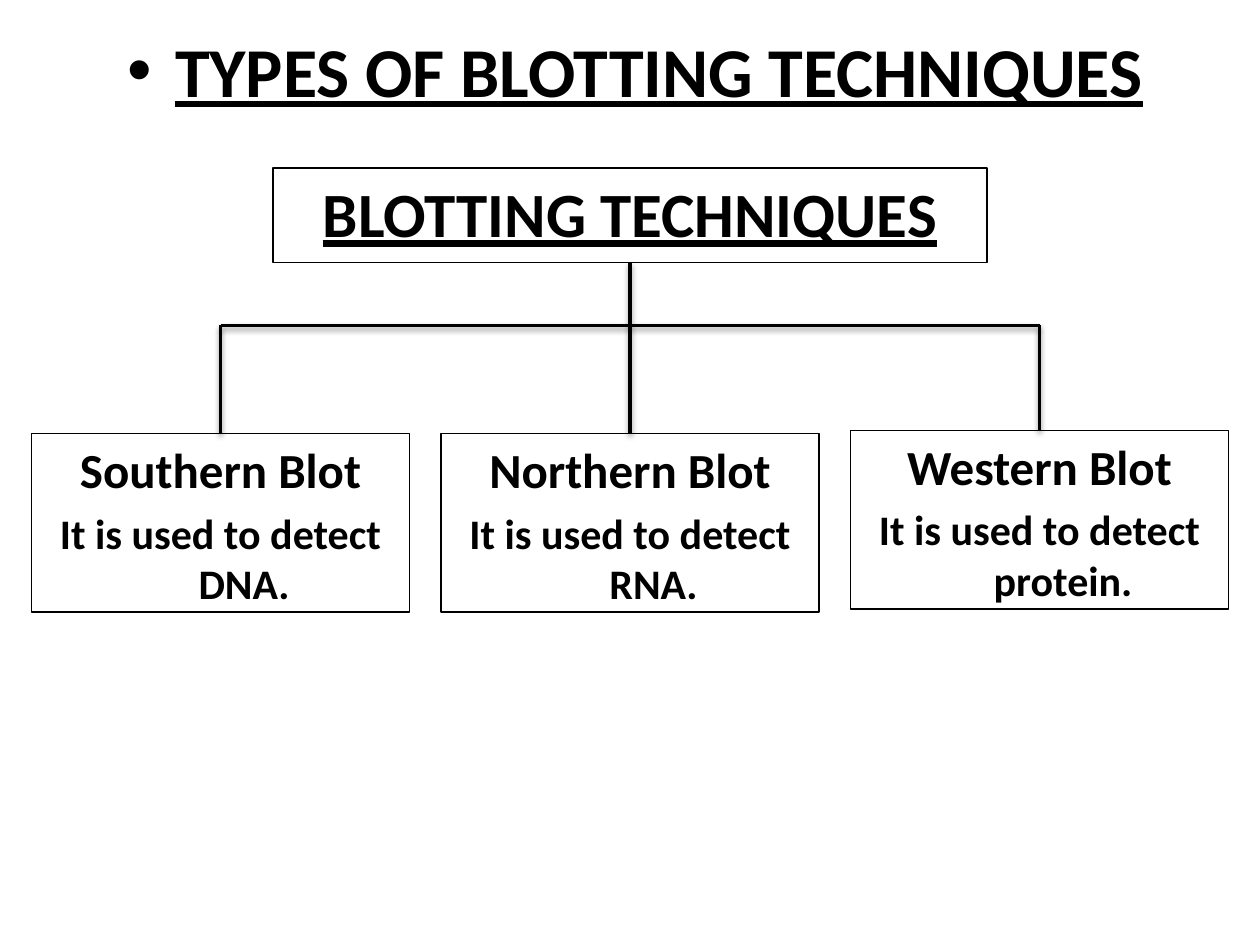
from dataclasses import dataclass

from lxml.etree import SubElement
from pptx import Presentation
from pptx.dml.color import RGBColor
from pptx.enum.shapes import MSO_CONNECTOR, MSO_SHAPE
from pptx.enum.text import MSO_ANCHOR, PP_ALIGN
from pptx.oxml.ns import qn
from pptx.slide import Slide
from pptx.util import Emu, Pt

EMU_PER_PX = 7620  # 120 px to the inch


@dataclass(frozen=True)
class Theme:
    font: str = "Calibri"
    ink: str = "000000"
    title_size: int = 40
    root_size: int = 36
    name_size: int = 28
    detail_size: int = 24
    box_line: float = 0.75
    branch_line: float = 2
    space_ratio: float = 0.2
    indent: int = 45


@dataclass(frozen=True)
class Line:
    text: str
    size: int
    underline: bool = False
    bullet: bool = False


@dataclass(frozen=True)
class Box:
    left: int
    top: int
    width: int
    height: int
    lines: tuple[Line, ...]
    outlined: bool = True

    @property
    def center(self) -> int:
        return self.left + self.width // 2

    @property
    def bottom(self) -> int:
        return self.top + self.height


@dataclass(frozen=True)
class Branch:
    start: tuple[int, int]
    end: tuple[int, int]


THEME = Theme()
INK = RGBColor.from_string(THEME.ink)


def px(*lengths: int) -> list[Emu]:
    return [Emu(length * EMU_PER_PX) for length in lengths]


def apply_format(target: object, values: dict[str, object]) -> None:
    for name, value in values.items():
        setattr(target, name, value)


def blot_box(column: int, top: int, name: str, target: str) -> Box:
    lines = (
        Line(f"{name} Blot", THEME.name_size),
        Line(f"It is used to detect {target}.", THEME.detail_size),
    )
    return Box(30 + column * 390, top, 360, 170, lines)


def write_line(paragraph, line: Line) -> None:
    apply_format(paragraph, {
        "alignment": PP_ALIGN.CENTER,
        "space_before": Pt(line.size * THEME.space_ratio),
    })
    indent = THEME.indent * EMU_PER_PX
    properties = paragraph._p.get_or_add_pPr()
    properties.set("marL", str(indent))
    properties.set("indent", str(-indent))
    if line.bullet:
        SubElement(properties, qn("a:buFont"), typeface="Arial")
        SubElement(properties, qn("a:buChar"), char="•")
    else:
        SubElement(properties, qn("a:buNone"))

    run = paragraph.add_run()
    run.text = line.text
    apply_format(run.font, {
        "name": THEME.font,
        "size": Pt(line.size),
        "bold": True,
        "underline": line.underline,
    })
    run.font.color.rgb = INK


def draw_box(slide: Slide, box: Box) -> None:
    bounds = px(box.left, box.top, box.width, box.height)
    if box.outlined:
        shape = slide.shapes.add_shape(MSO_SHAPE.RECTANGLE, *bounds)
        shape.shadow.inherit = False
        shape.fill.background()
        shape.line.color.rgb = INK
        shape.line.width = Pt(THEME.box_line)
    else:
        shape = slide.shapes.add_textbox(*bounds)
    frame = shape.text_frame
    apply_format(frame, {"word_wrap": True, "vertical_anchor": MSO_ANCHOR.TOP})
    for index, line in enumerate(box.lines):
        paragraph = frame.add_paragraph() if index else frame.paragraphs[0]
        write_line(paragraph, line)


def draw_branch(slide: Slide, branch: Branch) -> None:
    """Draw a straight line with a soft shadow below it."""
    connector = slide.shapes.add_connector(
        MSO_CONNECTOR.STRAIGHT, *px(*branch.start, *branch.end))
    connector.line.color.rgb = INK
    connector.line.width = Pt(THEME.branch_line)
    effects = SubElement(connector._element.spPr, qn("a:effectLst"))
    shadow = SubElement(effects, qn("a:outerShdw"), blurRad=str(Pt(3.1)),
                        dist=str(Pt(1.6)), dir="5400000", rotWithShape="0")
    color = SubElement(shadow, qn("a:srgbClr"), val=THEME.ink)
    SubElement(color, qn("a:alpha"), val="38000")


def main() -> None:
    presentation = Presentation()
    width, height = px(1200, 900)
    apply_format(presentation, {"slide_width": width, "slide_height": height})
    slide = presentation.slides.add_slide(presentation.slide_layouts[6])

    title = Box(50, 20, 1110, 90, (
        Line("TYPES OF BLOTTING TECHNIQUES", THEME.title_size, True, True),
    ), outlined=False)
    root = Box(260, 160, 680, 90, (
        Line("BLOTTING TECHNIQUES", THEME.root_size, True),
    ))
    southern = blot_box(0, 413, "Southern", "DNA")
    northern = blot_box(1, 413, "Northern", "RNA")
    western = blot_box(2, 410, "Western", "protein")

    bar = 310
    branches = (
        Branch((root.center, root.bottom), (northern.center, northern.top)),
        Branch((southern.center, bar), (western.center, bar)),
        Branch((southern.center, southern.top), (southern.center, bar)),
        Branch((western.center, western.top), (western.center, bar)),
    )
    for box in (title, root, southern, northern, western):
        draw_box(slide, box)
    for branch in branches:
        draw_branch(slide, branch)
    presentation.save("out.pptx")


if __name__ == "__main__":
    main()
